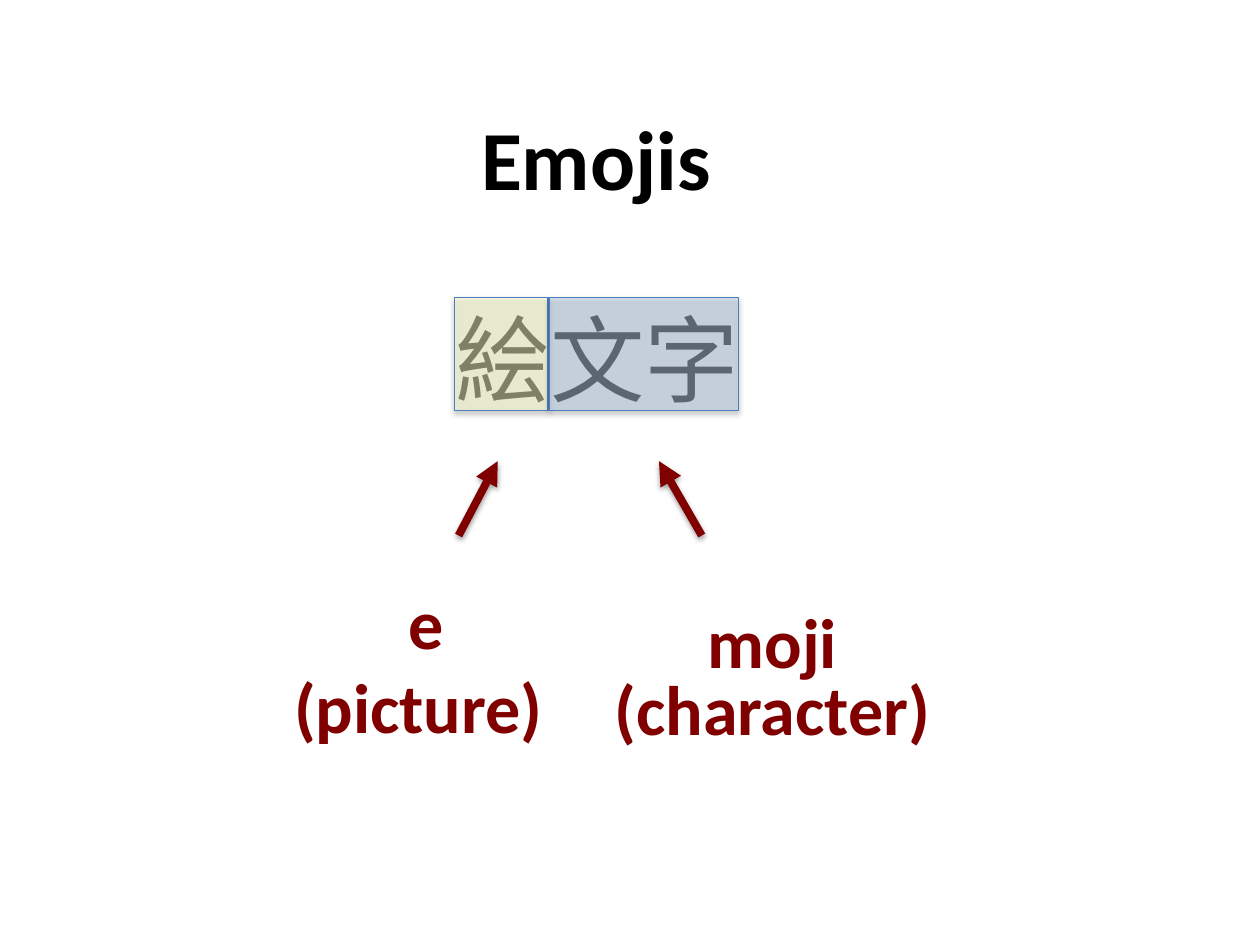
from lxml.etree import SubElement
from pptx import Presentation
from pptx.dml.color import RGBColor
from pptx.enum.shapes import MSO_CONNECTOR, MSO_SHAPE
from pptx.enum.text import MSO_AUTO_SIZE, PP_ALIGN
from pptx.oxml.ns import qn
from pptx.util import Inches, Pt

BLACK = RGBColor(0x00, 0x00, 0x00)
MAROON = RGBColor(0x80, 0x00, 0x00)
CREAM = RGBColor(0xFF, 0xFF, 0xCC)
PALE_BLUE = RGBColor(0xB9, 0xCD, 0xE5)
OUTLINE_BLUE = RGBColor(0x4B, 0x7E, 0xBC)


class EmojiSlide:
    font_name = "Calibri"

    def __init__(self, presentation):
        self.slide = presentation.slides.add_slide(presentation.slide_layouts[6])

    def add_text(self, text, left, top, width, height, size, color=BLACK,
                 bold=True, wrap=False, alignment=PP_ALIGN.LEFT, line_spacing=None):
        box = self.slide.shapes.add_textbox(
            Inches(left), Inches(top), Inches(width), Inches(height))
        text_frame = box.text_frame
        text_frame.text = text
        text_frame.word_wrap = wrap
        text_frame.auto_size = MSO_AUTO_SIZE.SHAPE_TO_FIT_TEXT
        for paragraph in text_frame.paragraphs:
            paragraph.alignment = alignment
            paragraph.line_spacing = line_spacing
            for run in paragraph.runs:
                run.font.name = self.font_name
                run.font.size = Pt(size)
                run.font.bold = bold
                run.font.color.rgb = color

    def add_highlight(self, left, width, color):
        shape = self.slide.shapes.add_shape(
            MSO_SHAPE.RECTANGLE, Inches(left), Inches(2.36), Inches(width), Inches(0.9))
        shape.fill.solid()
        shape.fill.fore_color.rgb = color
        fill_color = shape._element.spPr.find(qn("a:solidFill"))[0]
        SubElement(fill_color, qn("a:alpha")).set("val", "50000")
        shape.line.color.rgb = OUTLINE_BLUE
        shape.line.width = Pt(0.75)

    def add_arrow(self, start_x, end_x):
        connector = self.slide.shapes.add_connector(
            MSO_CONNECTOR.STRAIGHT,
            Inches(start_x), Inches(4.25), Inches(end_x), Inches(3.66))
        connector.line.color.rgb = MAROON
        connector.line.width = Pt(4.5)
        line = connector.line._get_or_add_ln()
        SubElement(line, qn("a:tailEnd")).set("type", "triangle")


def main():
    presentation = Presentation()
    presentation.slide_width = Inches(10)
    presentation.slide_height = Inches(7.5)

    slide = EmojiSlide(presentation)
    slide.add_text("Emojis", 3.72, 0.8, 2.04, 0.91, 48)
    slide.add_text("絵文字", 3.52, 2.34, 2.47, 1.01, 54, bold=False)
    slide.add_highlight(3.61, 0.74, CREAM)
    slide.add_highlight(4.36, 1.5, PALE_BLUE)
    slide.add_text(" e (picture)", 2.18, 4.55, 2.28, 1.45, 40, MAROON,
                   wrap=True, alignment=PP_ALIGN.CENTER)
    slide.add_text("moji\n(character)", 4.76, 4.83, 2.74, 1.18, 40, MAROON,
                   alignment=PP_ALIGN.CENTER, line_spacing=0.8)
    slide.add_arrow(3.64, 3.95)
    slide.add_arrow(5.57, 5.23)
    presentation.save("out.pptx")


if __name__ == "__main__":
    main()
